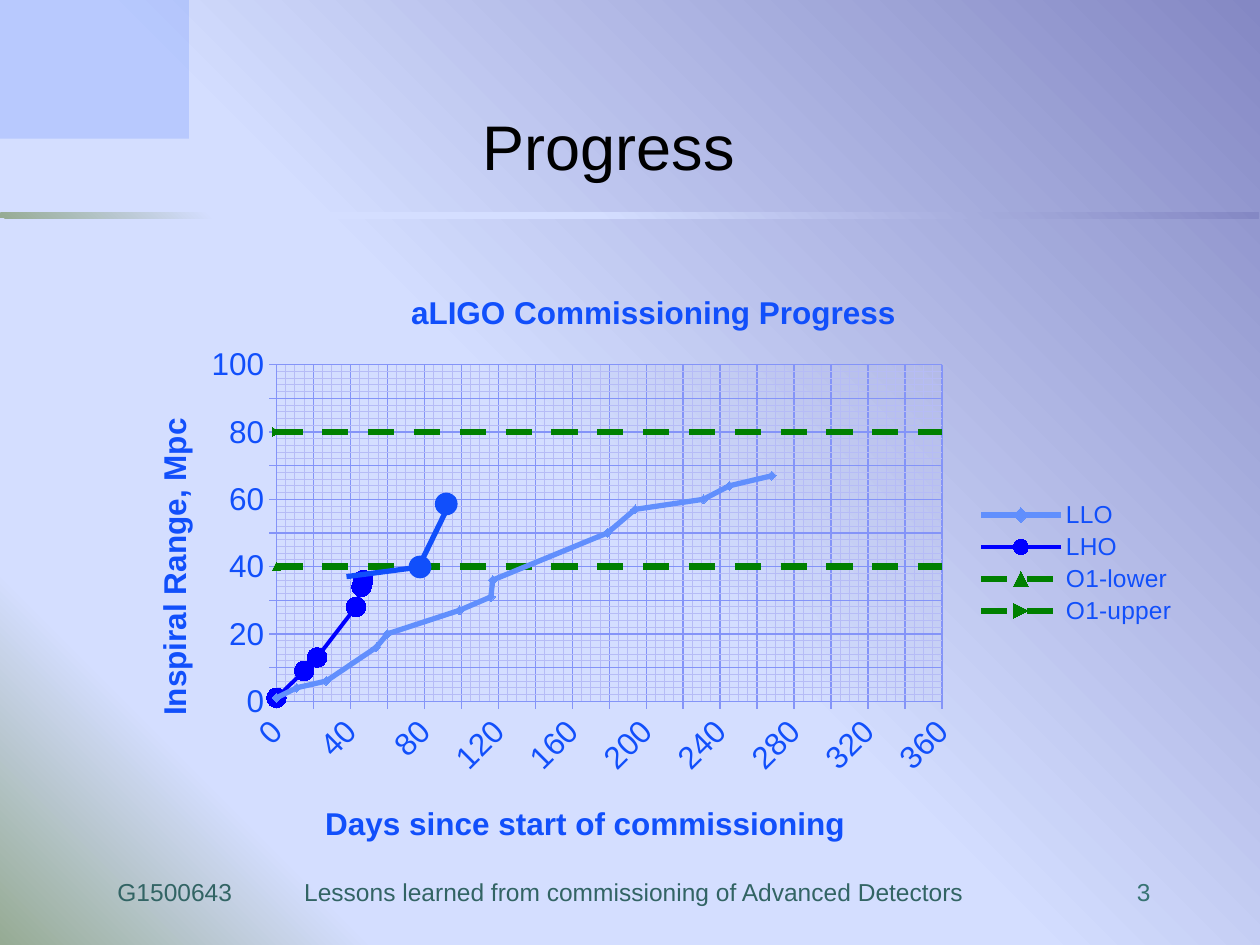
from lxml import etree
from pptx import Presentation
from pptx.chart import data
from pptx.dml import color
from pptx.enum import chart as charts, dml, shapes, text
from pptx.oxml import ns, parse_xml
from pptx.util import Pt

COLORS = {
    "dusk": "8488C4", "sky": "D4DEFF", "moss": "96AB94", "corner": "7095FD",
    "footer": "326464", "number": "377373", "title": "000000", "chart": "114FFB",
    "grid": "8494F8", "minor": "B6BCF6", "llo": "618FFD", "lho": "0000FF",
    "goal": "008000",
}
FONT = "Arial"
STOPS = [(0, "dusk"), (53, "sky"), (83, "sky"), (100, "moss")]
DIAGONAL = '<a:lin ang="8100000" scaled="0"/>'
FROM_RIGHT = '<a:path path="circle"><a:fillToRect l="100000" b="100000"/></a:path>'

MARK = charts.XL_MARKER_STYLE
DASH = dml.MSO_LINE.DASH
SERIES = [
    ("LLO", "llo", 3, None, MARK.DIAMOND, 5,
     [(0, 1), (11, 4), (27, 6), (54, 16), (60, 20), (99, 27), (116, 31), (117, 36),
      (179, 50), (194, 57), (231, 60), (245, 64), (268, 67)]),
    ("LHO", "lho", 2.25, None, MARK.CIRCLE, 11,
     [(0, 1), (15, 9), (22, 13), (43, 28), (46, 34), (47, 36)]),
    ("O1-lower", "goal", 3.75, DASH, MARK.TRIANGLE, 5, [(0, 40), (720, 40)]),
    ("O1-upper", "goal", 3.75, DASH, None, 5, [(0, 80), (720, 80)]),
]


def rgb(name):
    return color.RGBColor.from_string(COLORS[name])


def points(*lengths):
    return [Pt(length) for length in lengths]


def style(font, size, name, bold=False):
    font.name, font.size, font.bold = FONT, Pt(size), bold
    font.color.rgb = rgb(name)


def add_run(paragraph, words, size, name, bold=False):
    run = paragraph.add_run()
    run.text = words
    style(run.font, size, name, bold)


def set_gradient(fill, holder, direction):
    fill.gradient()
    stops = "".join(
        f'<a:gs pos="{pos * 1000}"><a:srgbClr val="{COLORS[name]}"/></a:gs>'
        for pos, name in STOPS)
    old = holder.find(ns.qn("a:gradFill"))
    holder.replace(old, parse_xml(
        f'<a:gradFill {ns.nsdecls("a")} rotWithShape="1">'
        f"<a:gsLst>{stops}</a:gsLst>{direction}</a:gradFill>"))


def add_solid(slide, kind, box, name):
    solid = slide.shapes.add_shape(kind, *points(*box))
    solid.shadow.inherit = False
    solid.fill.solid()
    solid.fill.fore_color.rgb = rgb(name)
    solid.line.fill.background()
    return solid


def add_backdrop(slide, width):
    fill = slide.background.fill
    set_gradient(fill, slide.background._cSld.bg.bgPr, DIAGONAL)
    rectangle = shapes.MSO_SHAPE.RECTANGLE
    divider = add_solid(slide, rectangle, (0, 121.7, width, 3), "sky")
    set_gradient(divider.fill, divider._element.spPr, FROM_RIGHT)
    corner = add_solid(slide, rectangle, (0, 0, 108, 79.2), "corner")
    tint = corner._element.spPr.find(".//" + ns.qn("a:srgbClr"))
    etree.SubElement(tint, ns.qn("a:alpha")).set("val", "28000")


def add_text_frame(slide, box, anchor):
    frame = slide.shapes.add_textbox(*points(*box)).text_frame
    frame.word_wrap = True
    frame.vertical_anchor = anchor
    return frame


def add_title(slide, box):
    paragraph = add_text_frame(slide, box, text.MSO_ANCHOR.BOTTOM).paragraphs[0]
    paragraph.alignment = text.PP_ALIGN.CENTER
    add_run(paragraph, "Progress", 36, "title")


def add_footer(slide, box):
    paragraph = add_text_frame(slide, box, text.MSO_ANCHOR.MIDDLE).paragraphs[0]
    tabs = etree.SubElement(paragraph._p.get_or_add_pPr(), ns.qn("a:tabLst"))
    for position, align in ((295.2, "ctr"), (590.4, "r")):
        tab = etree.SubElement(tabs, ns.qn("a:tab"))
        tab.set("pos", str(int(Pt(position))))
        tab.set("algn", align)
    footer = "G1500643\tLessons learned from commissioning of Advanced Detectors\t"
    add_run(paragraph, footer, 14, "footer")
    add_run(paragraph, "3", 14, "number")


def set_layout(element, index, inner=False, **fractions):
    for old in element.findall(ns.qn("c:layout")):
        element.remove(old)
    target = '<c:layoutTarget val="inner"/>' if inner else ""
    modes = "".join(f'<c:{side}Mode val="edge"/>' for side in "xy")
    sizes = "".join(f'<c:{key} val="{value}"/>' for key, value in fractions.items())
    element.insert(index, parse_xml(
        f'<c:layout {ns.nsdecls("c")}><c:manualLayout>{target}{modes}{sizes}'
        "</c:manualLayout></c:layout>"))


def set_chart_title(title, words, x, y):
    add_run(title.text_frame.paragraphs[0], words, 18, "chart", True)
    set_layout(title._element, 1, x=x, y=y)


def set_axis(axis, maximum, major, minor, rotation):
    axis.minimum_scale, axis.maximum_scale = 0, maximum
    axis.major_unit, axis.minor_unit = major, minor
    axis.has_major_gridlines = axis.has_minor_gridlines = True
    axis.major_tick_mark = charts.XL_TICK_MARK.OUTSIDE
    axis.minor_tick_mark = charts.XL_TICK_MARK.NONE
    for line in (axis.format.line, axis.major_gridlines.format.line):
        line.color.rgb = rgb("grid")
        line.width = Pt(0.75)
    axis._element.find(ns.qn("c:minorGridlines")).append(parse_xml(
        f'<c:spPr {ns.nsdecls("c", "a")}><a:ln w="{int(Pt(0.5))}"><a:solidFill>'
        f'<a:srgbClr val="{COLORS["minor"]}"/></a:solidFill></a:ln></c:spPr>'))
    style(axis.tick_labels.font, 18, "chart")
    axis.tick_labels.number_format = "0"
    axis.tick_labels.number_format_is_linked = False
    body = axis._element.find(ns.qn("c:txPr")).find(ns.qn("a:bodyPr"))
    body.set("rot", str(rotation * 60000))


def set_series(series, name, width, dash, marker, size):
    series.smooth = dash is None
    series.format.line.color.rgb = rgb(name)
    series.format.line.width = Pt(width)
    if dash:
        series.format.line.dash_style = dash
    if marker:
        series.marker.style = marker
    series.marker.size = size
    series.marker.format.fill.solid()
    series.marker.format.fill.fore_color.rgb = rgb(name)
    series.marker.format.line.color.rgb = rgb(name)


def add_progress_chart(slide, box):
    ranges = data.XyChartData()
    for name, *_, days in SERIES:
        detector = ranges.add_series(name)
        for day, reach in days:
            detector.add_data_point(day, reach)
    chart = slide.shapes.add_chart(
        charts.XL_CHART_TYPE.XY_SCATTER_SMOOTH, *points(*box), ranges).chart
    style(chart.font, 10, "chart")
    plot = chart.plots[0]
    plot.vary_by_categories = False
    for series, (_, *look, _) in zip(plot.series, SERIES):
        set_series(series, *look)
    chart.has_title = True
    set_chart_title(chart.chart_title, "aLIGO Commissioning Progress", 0.27, 0.04)
    set_axis(chart.category_axis, 360, 20, 5, -45)
    set_axis(chart.value_axis, 100, 10, 2, 0)
    set_chart_title(chart.category_axis.axis_title,
                    "Days since start of commissioning", 0.19, 0.89)
    set_chart_title(chart.value_axis.axis_title, "Inspiral Range, Mpc", 0.03, 0.25)
    chart.has_legend = True
    chart.legend.position = charts.XL_LEGEND_POSITION.RIGHT
    chart.legend.include_in_layout = False
    style(chart.legend.font, 14, "chart")
    set_layout(chart.legend._element, 1, x=0.8, y=0.39, w=0.19, h=0.22)
    set_layout(chart._chartSpace.chart.plotArea, 0, True,
               x=0.15, y=0.17, w=0.62, h=0.56)


def add_segment(slide, ends):
    segment = slide.shapes.add_connector(shapes.MSO_CONNECTOR.STRAIGHT, *points(*ends))
    segment.line.color.rgb = rgb("chart")
    segment.line.width = Pt(3)
    etree.SubElement(segment._element.spPr, ns.qn("a:effectLst"))


def add_recent_points(slide, left, top):
    add_segment(slide, (left, top + 47.5, left + 42, top + 42))
    for x, y in ((36, 36), (51, 0)):
        dot = add_solid(slide, shapes.MSO_SHAPE.OVAL, (left + x, top + y, 12, 12), "chart")
        dot.line.color.rgb = rgb("chart")
        dot.line.width = Pt(1)
    add_segment(slide, (left + 42, top + 40.5, left + 61, top + 1.5))


def main():
    deck = Presentation()
    deck.slide_width, deck.slide_height = points(720, 540)
    slide = deck.slides.add_slide(deck.slide_layouts[6])
    add_backdrop(slide, 719.3)
    add_footer(slide, (60, 497.5, 606, 24.5))
    add_title(slide, (126, 18, 444, 90))
    add_progress_chart(slide, (66, 150, 613.5, 343.5))
    add_recent_points(slide, 198, 282)
    deck.save("out.pptx")


if __name__ == "__main__":
    main()
